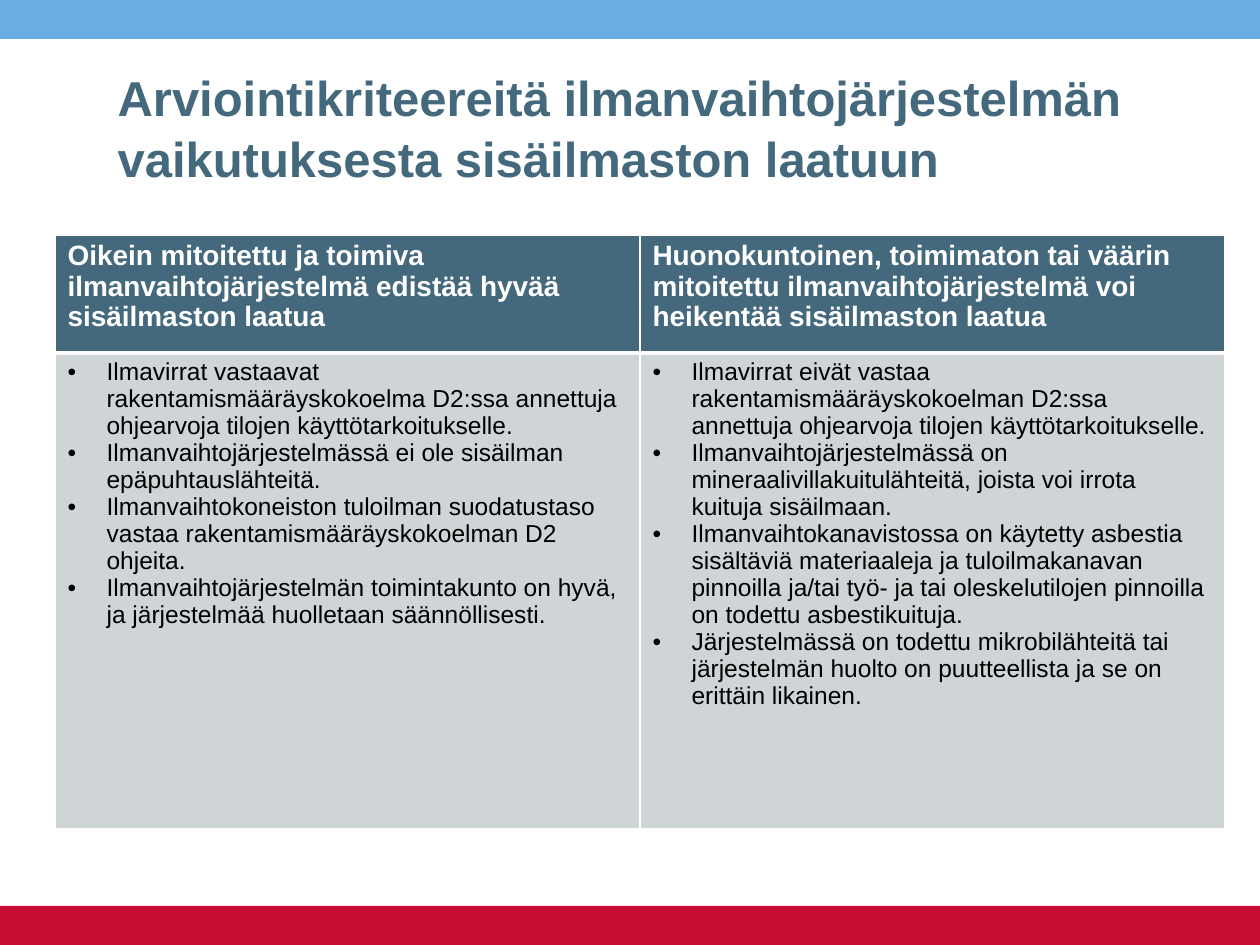
from lxml.etree import SubElement
from pptx import Presentation
from pptx.dml.color import RGBColor
from pptx.enum.shapes import MSO_SHAPE
from pptx.enum.text import MSO_ANCHOR, MSO_AUTO_SIZE, PP_ALIGN
from pptx.oxml.ns import qn
from pptx.util import Pt

EMU_PER_PX = 914400 / 126
SLIDE_W, SLIDE_H = 1260, 945
BAR_H = 39
COLUMN_W = 585
HEADER_H, CRITERIA_H = 118, 476
BULLET_INDENT = 39

COLORS = {
    "sky": "6AADE4",
    "red": "C60C30",
    "slate": "44697D",
    "grey": "CFD4D7",
    "white": "FFFFFF",
    "black": "000000",
}

TITLE = "Arviointikriteereitä ilmanvaihtojärjestelmän vaikutuksesta sisäilmaston laatuun"
HEADINGS = [
    "Oikein mitoitettu ja toimiva ilmanvaihtojärjestelmä edistää hyvää sisäilmaston laatua",
    "Huonokuntoinen, toimimaton tai väärin mitoitettu ilmanvaihtojärjestelmä voi "
    "heikentää sisäilmaston laatua",
]
CRITERIA = [
    [
        "Ilmavirrat vastaavat rakentamismääräyskokoelma D2:ssa annettuja ohjearvoja "
        "tilojen käyttötarkoitukselle.",
        "Ilmanvaihtojärjestelmässä ei ole sisäilman epäpuhtauslähteitä.",
        "Ilmanvaihtokoneiston tuloilman suodatustaso vastaa rakentamismääräyskokoelman "
        "D2 ohjeita.",
        "Ilmanvaihtojärjestelmän toimintakunto on hyvä, ja järjestelmää huolletaan "
        "säännöllisesti.",
    ],
    [
        "Ilmavirrat eivät vastaa rakentamismääräyskokoelman D2:ssa annettuja ohjearvoja "
        "tilojen käyttötarkoitukselle.",
        "Ilmanvaihtojärjestelmässä on mineraalivillakuitulähteitä, joista voi irrota "
        "kuituja sisäilmaan.",
        "Ilmanvaihtokanavistossa on käytetty asbestia sisältäviä materiaaleja ja "
        "tuloilmakanavan pinnoilla ja/tai työ- ja tai oleskelutilojen pinnoilla on "
        "todettu asbestikuituja.",
        "Järjestelmässä on todettu mikrobilähteitä tai järjestelmän huolto on "
        "puutteellista ja se on erittäin likainen.",
    ],
]


def px(length):
    return round(length * EMU_PER_PX)


def rgb(name):
    return RGBColor.from_string(COLORS[name])


def add_bullet(paragraph):
    props = paragraph._p.get_or_add_pPr()
    props.set("marL", str(px(BULLET_INDENT)))
    props.set("indent", str(-px(BULLET_INDENT)))
    SubElement(props, qn("a:buFont"), typeface="Arial")
    SubElement(props, qn("a:buChar"), char="•")


def write_text(frame, lines, *, size, color, bold=False, bullets=False, spacing=1.0):
    for index, line in enumerate(lines):
        paragraph = frame.paragraphs[0] if index == 0 else frame.add_paragraph()
        paragraph.text = line
        if bullets:
            add_bullet(paragraph)
        paragraph.alignment = PP_ALIGN.LEFT
        paragraph.line_spacing = spacing
        paragraph.font.name = "Arial"
        paragraph.font.size = Pt(size)
        paragraph.font.bold = bold
        paragraph.font.color.rgb = rgb(color)


def add_bar(slide, top, color):
    bar = slide.shapes.add_shape(MSO_SHAPE.RECTANGLE, 0, px(top), px(SLIDE_W), px(BAR_H))
    bar.shadow.inherit = False
    bar.fill.solid()
    bar.fill.fore_color.rgb = rgb(color)
    bar.line.fill.background()


def set_title(slide):
    title = slide.shapes.title
    title.left, title.top, title.width, title.height = map(px, (105, 45, 1032, 149))
    frame = title.text_frame
    frame.word_wrap = True
    frame.auto_size = MSO_AUTO_SIZE.NONE
    frame.vertical_anchor = MSO_ANCHOR.BOTTOM
    write_text(frame, [TITLE], size=28, color="slate", bold=True, spacing=1.05)


def set_borders(cell, **widths):
    props = cell._tc.get_or_add_tcPr()
    for side in "LRTB":
        line = SubElement(props, qn(f"a:ln{side}"), w=str(Pt(widths.get(side, 1))))
        fill = SubElement(line, qn("a:solidFill"))
        SubElement(fill, qn("a:srgbClr"), val=COLORS["white"])


def fill_cell(cell, color):
    cell.fill.solid()
    cell.fill.fore_color.rgb = rgb(color)


def add_criteria_table(slide):
    table = slide.shapes.add_table(
        2, 2, px(55), px(235), px(2 * COLUMN_W), px(HEADER_H + CRITERIA_H)
    ).table
    table.horz_banding = False
    table.rows[0].height, table.rows[1].height = px(HEADER_H), px(CRITERIA_H)
    for column, (heading, criteria) in enumerate(zip(HEADINGS, CRITERIA)):
        table.columns[column].width = px(COLUMN_W)
        header, body = table.cell(0, column), table.cell(1, column)
        # Thick white rule between heading and criteria
        set_borders(header, B=3)
        set_borders(body, T=3)
        fill_cell(header, "slate")
        fill_cell(body, "grey")
        write_text(header.text_frame, [heading], size=16, color="white", bold=True,
                   spacing=0.98)
        write_text(body.text_frame, criteria, size=14, color="black", bullets=True,
                   spacing=0.98)


def main():
    deck = Presentation()
    deck.slide_width, deck.slide_height = px(SLIDE_W), px(SLIDE_H)
    slide = deck.slides.add_slide(deck.slide_layouts[5])
    # Coloured bands at the top and bottom edges
    add_bar(slide, 0, "sky")
    add_bar(slide, SLIDE_H - BAR_H, "red")
    # Title and comparison
    set_title(slide)
    add_criteria_table(slide)
    deck.save("out.pptx")


if __name__ == "__main__":
    main()
